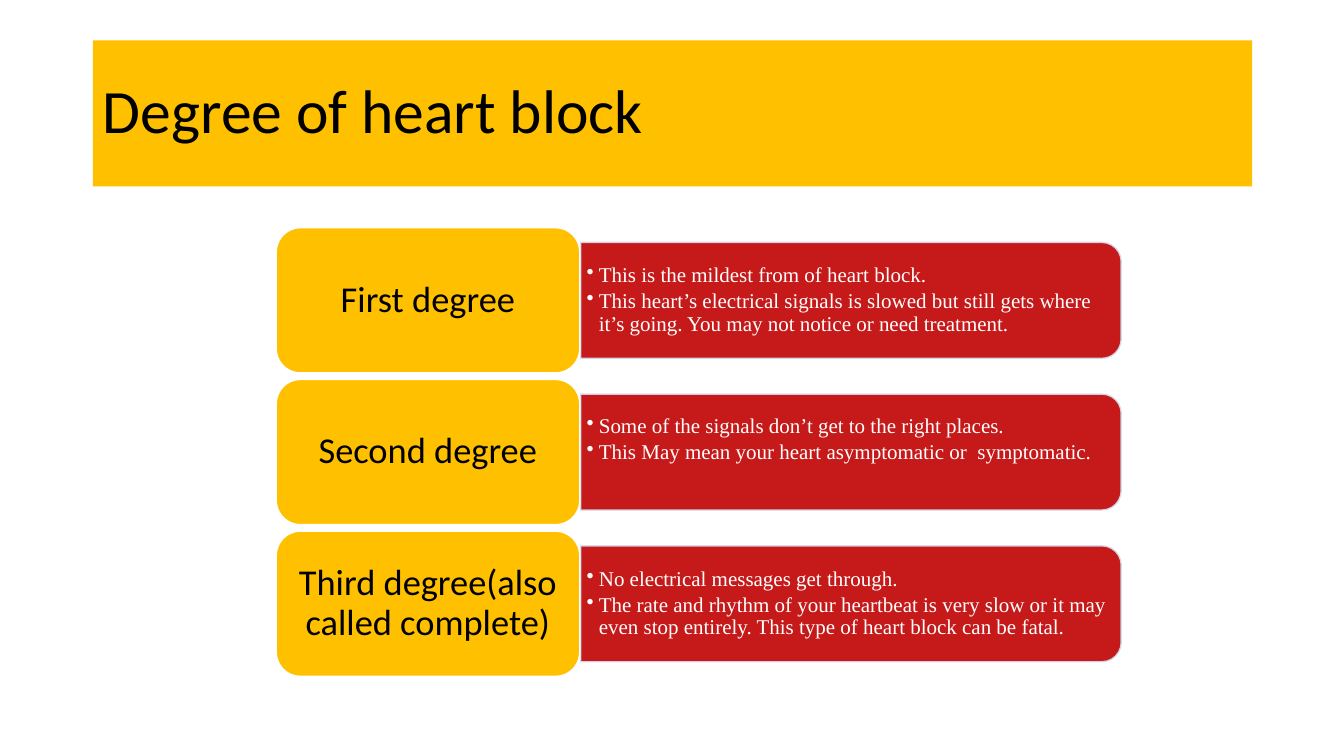
from lxml import etree
from pptx import Presentation
from pptx import util as u
from pptx.dml.color import RGBColor
from pptx.enum import shapes, text
from pptx.oxml.ns import qn

COLORS = {"amber": "FFC000", "red": "C00000", "edge": "D2DEEF",
          "white": "FFFFFF", "black": "000000"}

# Name, description and bottom inset of the description
DEGREES = [
    ("First degree", [
        "This is the mildest from of heart block.",
        "This heart’s electrical signals is slowed but still gets where it’s going. "
        "You may not notice or need treatment."], 0.03),
    ("Second degree", [
        "Some of the signals don’t get to the right places.",
        "This May mean your heart asymptomatic or  symptomatic."], 0.28),
    ("Third degree(also called complete)", [
        "No electrical messages get through.",
        "The rate and rhythm of your heartbeat is very slow or it may even stop entirely. "
        "This type of heart block can be fatal."], 0.03),
]

# Row geometry in inches
FIRST_TOP, ROW_PITCH = 2.26, 1.505
LABEL_LEFT, LABEL_WIDTH, LABEL_HEIGHT = 2.74, 3.01, 1.44
BAR_LEFT, BAR_WIDTH, BAR_HEIGHT = 5.76, 5.36, 1.15
LIST_WIDTH, LIST_HEIGHT = 5.3, 1.04


class DegreeSlide:
    heading_font, list_font = "Calibri", "Times New Roman"

    def __init__(self, prs):
        self.slide = prs.slides.add_slide(prs.slide_layouts[5])

    def color(self, name):
        return RGBColor.from_string(COLORS[name])

    def fill(self, shape, name):
        shape.fill.solid()
        shape.fill.fore_color.rgb = self.color(name)

    def make_translucent(self, shape, percent):
        for tone in shape._element.spPr.iter(qn("a:srgbClr")):
            etree.SubElement(tone, qn("a:alpha"), val=str(percent * 1000))

    def setup_frame(self, frame, insets):
        frame.word_wrap = True
        frame.auto_size = text.MSO_AUTO_SIZE.NONE
        frame.vertical_anchor = text.MSO_ANCHOR.MIDDLE
        (frame.margin_left, frame.margin_top,
         frame.margin_right, frame.margin_bottom) = map(u.Inches, insets)

    def add_words(self, paragraph, words, font, size, color, align, after=0):
        paragraph.alignment = align
        paragraph.line_spacing = 0.9
        paragraph.space_before = u.Pt(0)
        paragraph.space_after = u.Pt(after)
        run = paragraph.add_run()
        run.text = words
        run.font.name = font
        run.font.size = u.Pt(size)
        run.font.color.rgb = self.color(color)

    def title(self, words, left, top, width, height):
        heading = self.slide.shapes.title
        heading.left, heading.top = u.Inches(left), u.Inches(top)
        heading.width, heading.height = u.Inches(width), u.Inches(height)
        self.fill(heading, "amber")
        self.setup_frame(heading.text_frame, (0.1, 0.05, 0.1, 0.05))
        self.add_words(heading.text_frame.paragraphs[0], words, self.heading_font,
                       44, "black", text.PP_ALIGN.LEFT)

    def preset(self, kind, left, top, width, height, fill, line):
        shape = self.slide.shapes.add_shape(
            kind, *map(u.Inches, (left, top, width, height)))
        shape.shadow.inherit = False
        self.fill(shape, fill)
        shape.line.color.rgb = self.color(line)
        shape.line.width = u.Pt(1)
        return shape

    def bar(self, middle):
        # Rounded top corners turn to face right
        center = BAR_LEFT + BAR_WIDTH / 2
        bar = self.preset(shapes.MSO_SHAPE.ROUND_2_SAME_RECTANGLE,
                          center - BAR_HEIGHT / 2, middle - BAR_WIDTH / 2,
                          BAR_HEIGHT, BAR_WIDTH, "red", "edge")
        bar.rotation = 90
        self.make_translucent(bar, 90)

    def bullets(self, items, middle, bottom_inset):
        description = self.slide.shapes.add_textbox(*map(u.Inches, (
            BAR_LEFT, middle - LIST_HEIGHT / 2, LIST_WIDTH, LIST_HEIGHT)))
        frame = description.text_frame
        self.setup_frame(frame, (0.06, 0.03, 0.06, bottom_inset))
        for i, item in enumerate(items):
            paragraph = frame.add_paragraph() if i else frame.paragraphs[0]
            self.add_words(paragraph, item, self.list_font, 15, "white",
                           text.PP_ALIGN.LEFT, after=2.25)
            props = paragraph._p.get_or_add_pPr()
            props.set("marL", str(u.Inches(0.12)))
            props.set("indent", str(-u.Inches(0.12)))
            etree.SubElement(props, qn("a:buChar"), char="•")

    def label(self, words, top):
        label = self.preset(shapes.MSO_SHAPE.ROUNDED_RECTANGLE, LABEL_LEFT, top,
                            LABEL_WIDTH, LABEL_HEIGHT, "amber", "white")
        self.setup_frame(label.text_frame, (0.11, 0.05, 0.11, 0.05))
        self.add_words(label.text_frame.paragraphs[0], words, self.heading_font,
                       26, "black", text.PP_ALIGN.CENTER)


def main():
    prs = Presentation()
    prs.slide_width, prs.slide_height = u.Inches(13.33), u.Inches(7.5)
    page = DegreeSlide(prs)

    # Title band
    page.title("Degree of heart block", 0.92, 0.4, 11.5, 1.45)

    # One row per degree: bar, description, label
    for row, (name, items, bottom_inset) in enumerate(DEGREES):
        top = FIRST_TOP + row * ROW_PITCH
        middle = top + LABEL_HEIGHT / 2
        page.bar(middle)
        page.bullets(items, middle, bottom_inset)
        page.label(name, top)

    prs.save("out.pptx")


if __name__ == "__main__":
    main()
